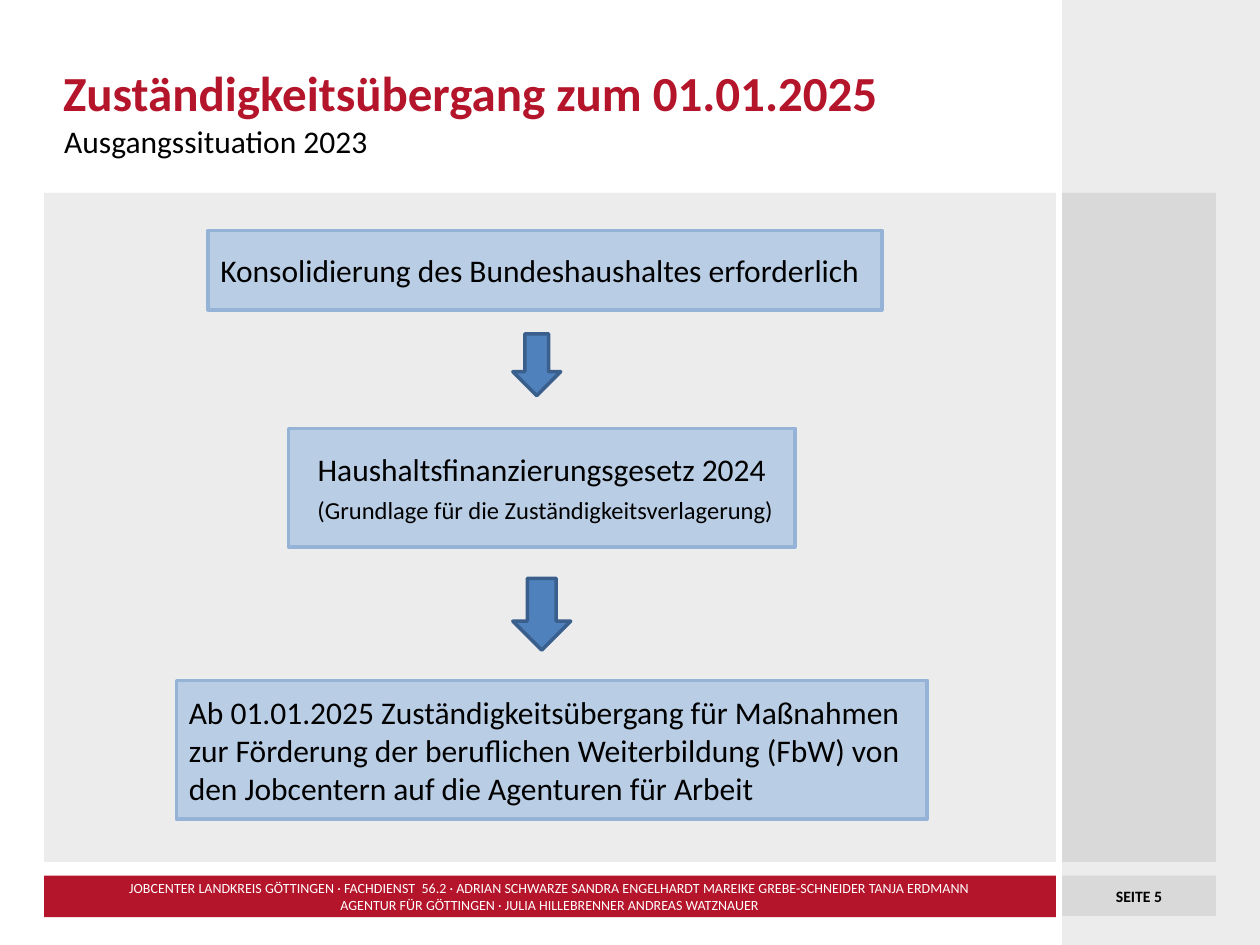
from pptx import Presentation
from pptx.dml.color import RGBColor
from pptx.enum.shapes import MSO_SHAPE
from pptx.enum.text import MSO_ANCHOR, MSO_AUTO_SIZE, PP_ALIGN
from pptx.util import Inches, Pt

FONT = "Calibri"
RED = RGBColor(0xB5, 0x15, 0x2B)
LIGHT_GREY = RGBColor(0xEC, 0xEC, 0xEC)
MID_GREY = RGBColor(0xD9, 0xD9, 0xD9)
PALE_BLUE = RGBColor(0xB9, 0xCD, 0xE5)
BOX_LINE = RGBColor(0x95, 0xB3, 0xD7)
BLUE = RGBColor(0x4F, 0x81, 0xBD)
ARROW_LINE = RGBColor(0x3A, 0x5F, 0x8C)
BLACK = RGBColor(0, 0, 0)
WHITE = RGBColor(0xFF, 0xFF, 0xFF)

# Column and row edges of the page frame
MAIN_X, MAIN_W = 0.35, 8.03
SIDE_X, SIDE_W = 8.43, 1.22
BODY_Y, BODY_H = 1.53, 5.31
FOOT_Y = 6.95


class SlideBuilder:
    def __init__(self, prs):
        self.slide = prs.slides.add_slide(prs.slide_layouts[5])

    def set_text(self, tf, text, size, color=BLACK, bold=False,
                 align=PP_ALIGN.LEFT, anchor=MSO_ANCHOR.MIDDLE):
        tf.text = text
        tf.word_wrap = True
        tf.vertical_anchor = anchor
        for p in tf.paragraphs:
            p.alignment = align
            for r in p.runs:
                self.style_run(r, size, color, bold)

    def style_run(self, r, size, color=BLACK, bold=False):
        r.font.name = FONT
        r.font.size = Pt(size)
        r.font.bold = bold
        r.font.color.rgb = color

    def title(self, text, x, y, w, h):
        s = self.slide.shapes.title
        s.left, s.top, s.width, s.height = map(Inches, (x, y, w, h))
        tf = s.text_frame
        self.set_text(tf, text, 28, RED, bold=True, anchor=MSO_ANCHOR.BOTTOM)
        tf.auto_size = MSO_AUTO_SIZE.NONE
        tf.margin_left = tf.margin_right = 0
        tf.paragraphs[0].line_spacing = 0.8

    def text(self, text, x, y, w, h, size, margin_y=0.05, **style):
        s = self.slide.shapes.add_textbox(*map(Inches, (x, y, w, h)))
        tf = s.text_frame
        self.set_text(tf, text, size, **style)
        tf.margin_left = tf.margin_right = 0
        tf.margin_top = tf.margin_bottom = Inches(margin_y)

    def shape(self, x, y, w, h, fill, line=None, kind=MSO_SHAPE.RECTANGLE):
        s = self.slide.shapes.add_shape(kind, *map(Inches, (x, y, w, h)))
        s.shadow.inherit = False
        s.fill.solid()
        s.fill.fore_color.rgb = fill
        if line is None:
            s.line.fill.background()
        else:
            s.line.color.rgb = line
            s.line.width = Pt(2)
        return s

    def box(self, text, x, y, w, h, align=PP_ALIGN.LEFT):
        s = self.shape(x, y, w, h, PALE_BLUE, BOX_LINE)
        self.set_text(s.text_frame, text, 18, align=align)
        return s

    def arrow(self, x, y, w, h):
        self.shape(x, y, w, h, BLUE, ARROW_LINE, MSO_SHAPE.DOWN_ARROW)


def main():
    prs = Presentation()
    prs.slide_width, prs.slide_height = Inches(10), Inches(7.5)
    b = SlideBuilder(prs)

    # Page frame
    b.shape(MAIN_X, BODY_Y, MAIN_W, BODY_H, LIGHT_GREY)
    b.shape(SIDE_X, 0, 10 - SIDE_X, 7.5, LIGHT_GREY)
    b.shape(SIDE_X, BODY_Y, SIDE_W, BODY_H, MID_GREY)

    # Footer and page number
    b.shape(MAIN_X, FOOT_Y, MAIN_W, 0.33, RED)
    page = b.shape(SIDE_X, FOOT_Y, SIDE_W, 0.32, MID_GREY)
    b.set_text(page.text_frame, "SEITE 5", 9, bold=True,
               align=PP_ALIGN.CENTER)
    b.text("JOBCENTER LANDKREIS GÖTTINGEN · FACHDIENST  56.2 · ADRIAN SCHWARZE "
           "SANDRA ENGELHARDT MAREIKE GREBE-SCHNEIDER TANJA ERDMANN\n"
           "AGENTUR FÜR GÖTTINGEN · JULIA HILLEBRENNER ANDREAS WATZNAUER",
           MAIN_X, 6.98, MAIN_W, 0.27, 8, margin_y=0,
           color=WHITE, align=PP_ALIGN.CENTER)

    # Heading
    b.title("Zuständigkeitsübergang zum 01.01.2025", 0.5, 0.32, 6.86, 0.69)
    b.text("Ausgangssituation 2023", 0.51, 0.92, 6.85, 0.31, 18,
           anchor=MSO_ANCHOR.TOP)

    # Steps
    b.box("Konsolidierung des Bundeshaushaltes erforderlich",
          1.65, 1.83, 5.35, 0.63)
    law = b.box("Haushaltsfinanzierungsgesetz 2024\n ", 2.29, 3.4, 4.02, 0.94,
                align=PP_ALIGN.CENTER)
    r = law.text_frame.paragraphs[1].add_run()
    r.text = "(Grundlage für die Zuständigkeitsverlagerung)"
    b.style_run(r, 14)
    b.box("Ab 01.01.2025 Zuständigkeitsübergang für Maßnahmen zur Förderung "
          "der beruflichen Weiterbildung (FbW) von den Jobcentern auf die "
          "Agenturen für Arbeit", 1.4, 5.4, 5.96, 1.1)

    # Arrows between the steps
    b.arrow(4.07, 2.65, 0.38, 0.49)
    b.arrow(4.07, 4.59, 0.46, 0.57)

    prs.save("out.pptx")


if __name__ == "__main__":
    main()
